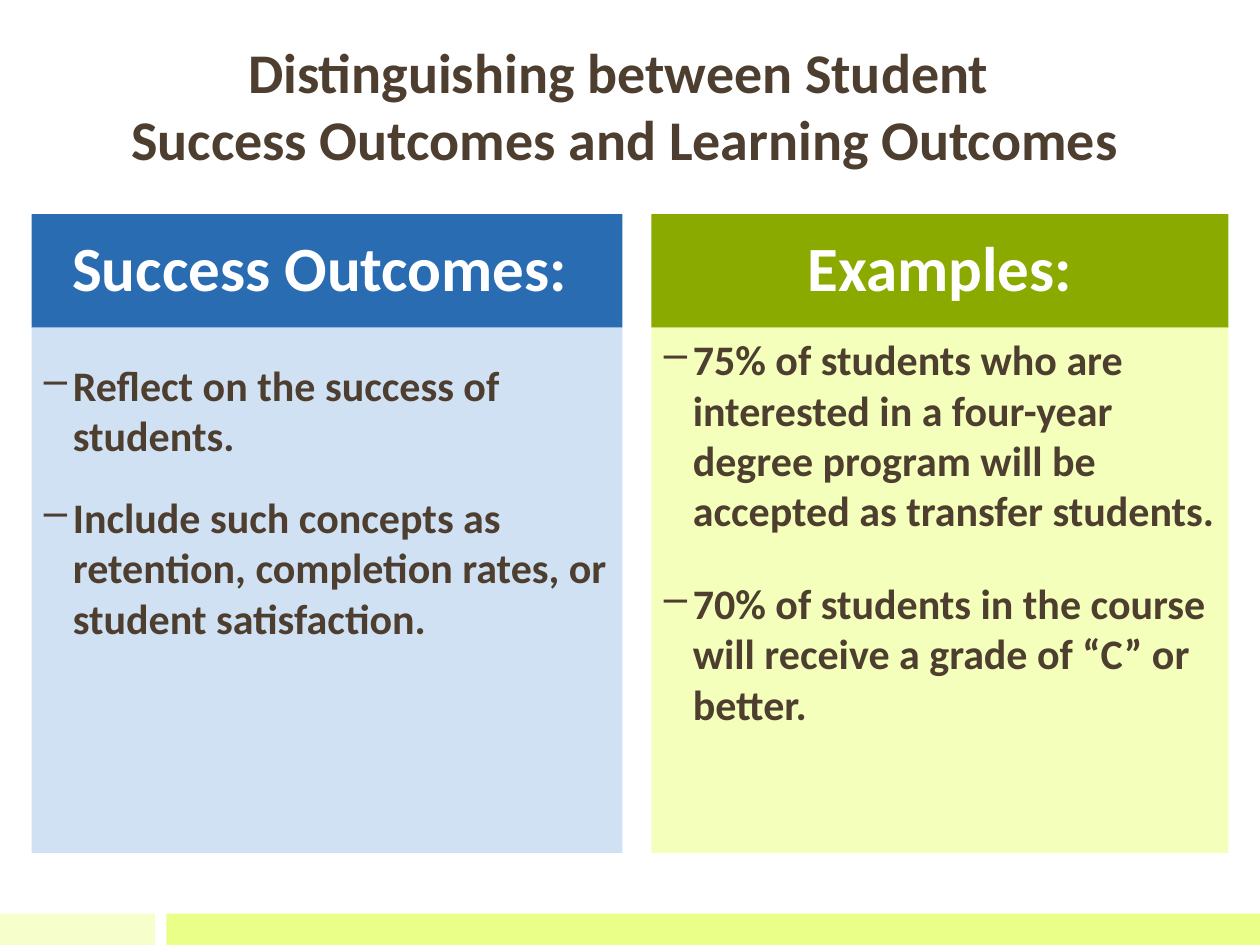
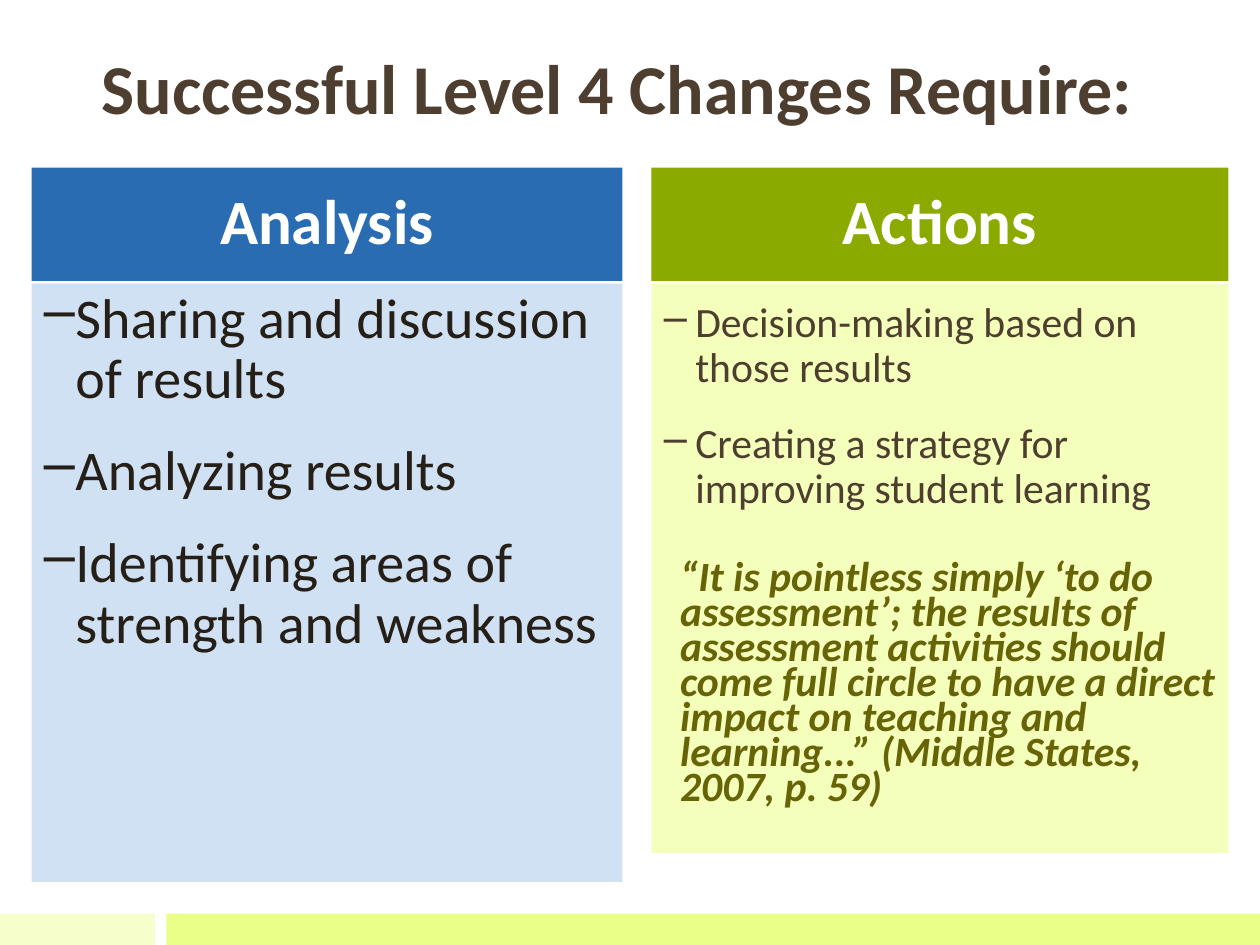
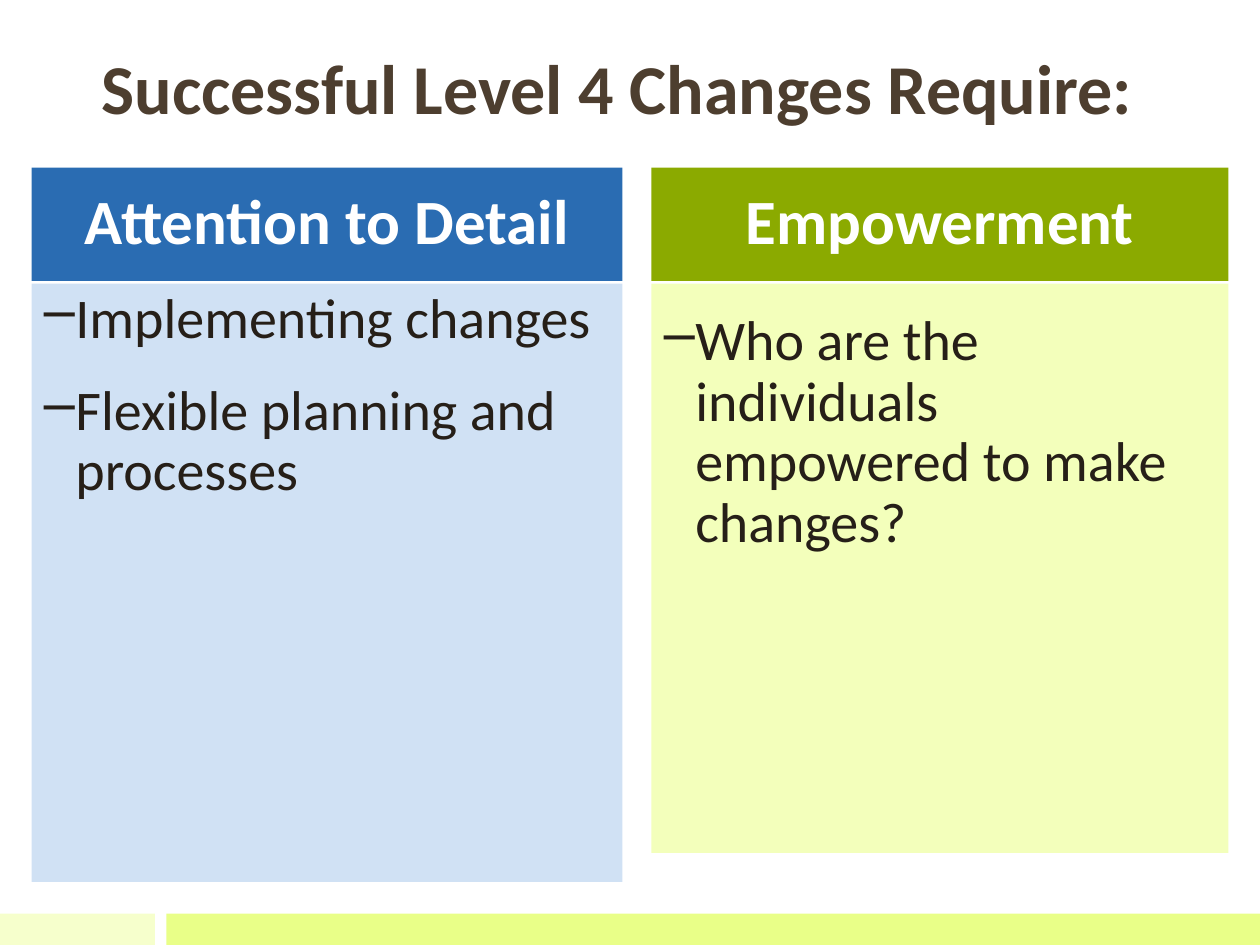
"""Build three two-panel slides about student outcomes and assessment."""
from dataclasses import dataclass

from lxml import etree
from pptx import Presentation
from pptx import util as u
from pptx.dml.color import RGBColor
from pptx.enum import shapes, text
from pptx.oxml.ns import qn

COLORS = {
    "white": "FFFFFF", "brown": "4D3E2F", "dark": "261F18", "olive": "676407",
    "blue": "2A6CB2", "pale_blue": "D0E1F4",
    "green": "8BAA00", "pale_green": "F3FFBB",
    "band_light": "F6FFCC", "band": "E9FF88",
}
FONT = "Calibri"
COLUMNS, ROWS = 100, 75
CELL = u.Inches(0.1)
PANEL_COLUMNS = [(2.5, 46.9, "blue", "pale_blue"), (51.7, 45.8, "green", "pale_green")]
HEADING_ROWS = 9
REQUIREMENTS_TITLE = "Successful Level 4 Changes Require: "


@dataclass
class Style:
    """Look of one paragraph; lengths are in points, indents in inches."""
    size: float
    color: str
    bold: bool = False
    italic: bool = False
    line: float = 1.0
    before: float = 0
    after: float = 0
    indent: float = 0
    bullet: bool = False
    align: text.PP_ALIGN = text.PP_ALIGN.LEFT


CENTER = text.PP_ALIGN.CENTER
TITLE_SMALL = Style(32, "brown", bold=True, align=CENTER)
TITLE_LARGE = Style(40, "brown", bold=True, align=CENTER)
HEADING = Style(36, "white", bold=True, line=0.9, align=CENTER)
OUTCOME = Style(24, "brown", bold=True, after=18, indent=0.23, bullet=True)
EXAMPLE = Style(24, "brown", bold=True, after=24, indent=0.23, bullet=True)
POINT = Style(32, "dark", line=0.9, after=18, indent=0.25, bullet=True)
ACTION = Style(23.8, "brown", line=0.9, after=18, indent=0.25, bullet=True)
QUOTE = Style(23.8, "olive", bold=True, italic=True, line=0.7, before=11, indent=0.13)


def add_box(slide, box, fill):
    """Add a plain filled rectangle at a box of grid cells."""
    left, top, width, height = (round(cells * CELL) for cells in box)
    shape = slide.shapes.add_shape(shapes.MSO_SHAPE.RECTANGLE, left, top, width, height)
    shape.shadow.inherit = False
    shape.fill.solid()
    shape.fill.fore_color.rgb = RGBColor.from_string(COLORS[fill])
    shape.line.fill.background()
    return shape


def format_paragraph(paragraph, style):
    """Apply a style to a paragraph and its runs."""
    paragraph.alignment = style.align
    paragraph.line_spacing = style.line
    paragraph.space_before = u.Pt(style.before)
    paragraph.space_after = u.Pt(style.after)
    properties = paragraph._p.get_or_add_pPr()
    indent = u.Inches(style.indent)
    properties.set("marL", str(indent))
    properties.set("indent", str(-indent if style.bullet else 0))
    if style.bullet:
        etree.SubElement(properties, qn("a:buChar")).set("char", "–")
    for run in paragraph.runs:
        run.font.name = FONT
        run.font.size = u.Pt(style.size)
        run.font.bold = style.bold
        run.font.italic = style.italic
        run.font.color.rgb = RGBColor.from_string(COLORS[style.color])


def write(shape, items, anchor, lead=0):
    """Fill a shape with (text, style) paragraphs, starting lead inches lower."""
    frame = shape.text_frame
    frame.word_wrap = True
    frame.vertical_anchor = anchor
    frame.margin_top = u.Inches(0.05 + lead)
    for index, (words, style) in enumerate(items):
        paragraph = frame.add_paragraph() if index else frame.paragraphs[0]
        paragraph.text = words
        format_paragraph(paragraph, style)


def add_title(slide, words, style, rows, anchor):
    """Add the title across the top of the slide."""
    title = add_box(slide, (1.7, 3, 95.8, rows), "white")
    write(title, [(words, style)], anchor)


def add_bands(slide):
    """Add the two footer bands along the bottom edge."""
    split, gap, height = 12.3, 0.9, 2.5
    top = ROWS - height
    add_box(slide, (0, top, split, height), "band_light")
    add_box(slide, (split + gap, top, COLUMNS - split - gap, height), "band")


def add_panel(slide, column, top, gap, bottom, panel):
    """Add a heading bar with its body box beneath it."""
    left, width, heading_fill, body_fill = column
    heading, lead, items = panel
    bar = add_box(slide, (left, top, width, HEADING_ROWS), heading_fill)
    write(bar, [(heading, HEADING)], text.MSO_ANCHOR.MIDDLE)
    body_top = top + HEADING_ROWS + gap
    body = add_box(slide, (left, body_top, width, bottom - body_top), body_fill)
    write(body, items, text.MSO_ANCHOR.TOP, lead)


def add_panels(slide, top, gap, bottoms, panels):
    """Add the left and right panels."""
    for column, bottom, panel in zip(PANEL_COLUMNS, bottoms, panels):
        add_panel(slide, column, top, gap, bottom, panel)


def add_outcomes_slide(slide, words, panels):
    """Build the slide with a two-line title."""
    add_bands(slide)
    add_title(slide, words, TITLE_SMALL, 11.1, text.MSO_ANCHOR.BOTTOM)
    add_panels(slide, 17, 0, (67.7, 67.7), panels)


def add_requirements_slide(slide, panels):
    """Build a slide with the one-line requirements title."""
    add_bands(slide)
    add_title(slide, REQUIREMENTS_TITLE, TITLE_LARGE, 7.8, text.MSO_ANCHOR.MIDDLE)
    add_panels(slide, 13.3, 0.2, (70, 67.7), panels)


def main():
    """Create and save the presentation."""
    presentation = Presentation()
    presentation.slide_width = COLUMNS * CELL
    presentation.slide_height = ROWS * CELL
    blank = presentation.slide_layouts[6]

    add_outcomes_slide(
        presentation.slides.add_slide(blank),
        "Distinguishing between Student \vSuccess Outcomes and Learning Outcomes",
        [
            ("Success Outcomes: ", 0.2, [
                ("Reflect on the success of students.", OUTCOME),
                ("Include such concepts as retention, completion rates, "
                 "or student satisfaction.", OUTCOME),
            ]),
            ("Examples:", 0, [
                ("75% of students who are interested in a four-year degree program "
                 "will be accepted as transfer students.", EXAMPLE),
                ("70% of students in the course will receive a grade of “C” or better.",
                 EXAMPLE),
            ]),
        ])
    add_requirements_slide(presentation.slides.add_slide(blank), [
        ("Analysis", 0, [
            ("Sharing and discussion of results", POINT),
            ("Analyzing results", POINT),
            ("Identifying areas of strength and weakness", POINT),
        ]),
        ("Actions", 0.09, [
            ("Decision-making based on those results", ACTION),
            ("Creating a strategy for improving student learning", ACTION),
            ("“It is pointless simply ‘to do assessment’; the results of assessment "
             "activities should come full circle to have a direct impact on teaching "
             "and learning...” (Middle States, 2007, p. 59)", QUOTE),
        ]),
    ])
    add_requirements_slide(presentation.slides.add_slide(blank), [
        ("Attention to Detail", 0, [
            ("Implementing changes", POINT),
            ("Flexible planning and processes", POINT),
        ]),
        ("Empowerment", 0.18, [
            ("Who are the individuals empowered to make changes?", POINT),
        ]),
    ])
    presentation.save("out.pptx")


if __name__ == "__main__":
    main()
